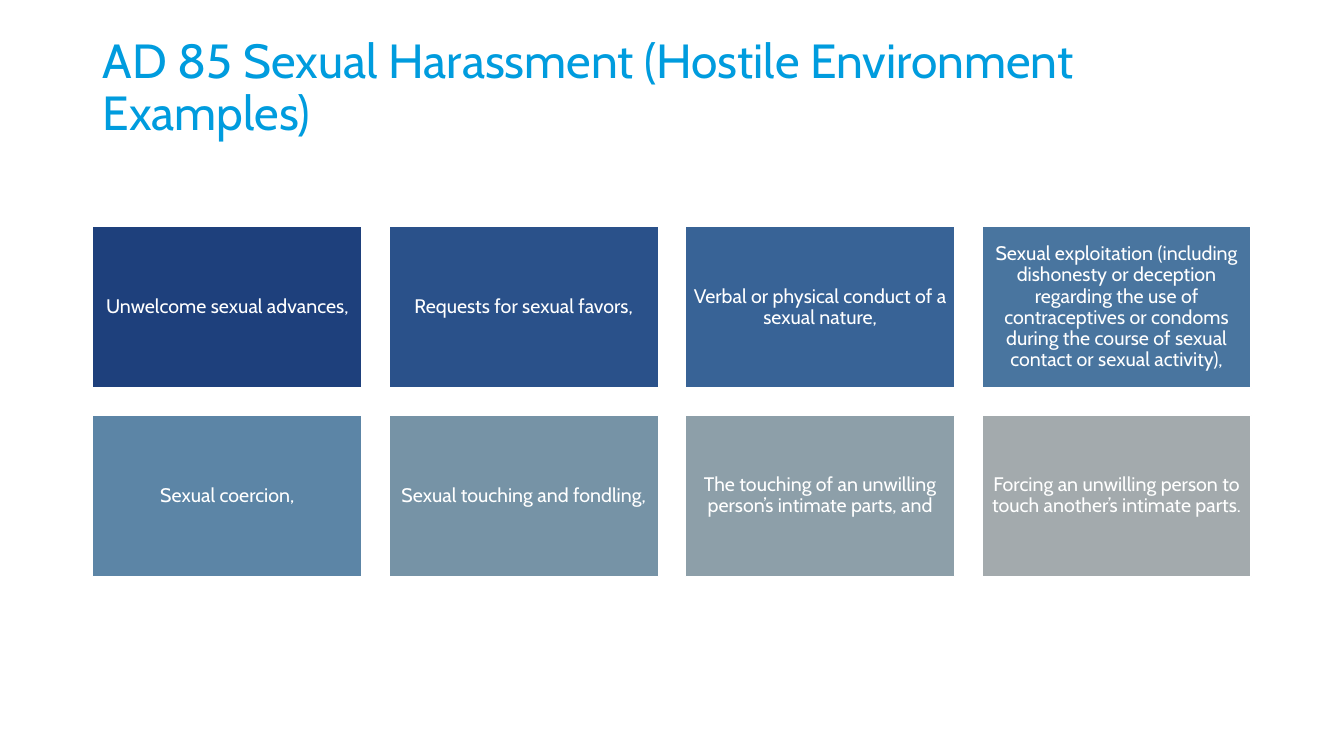
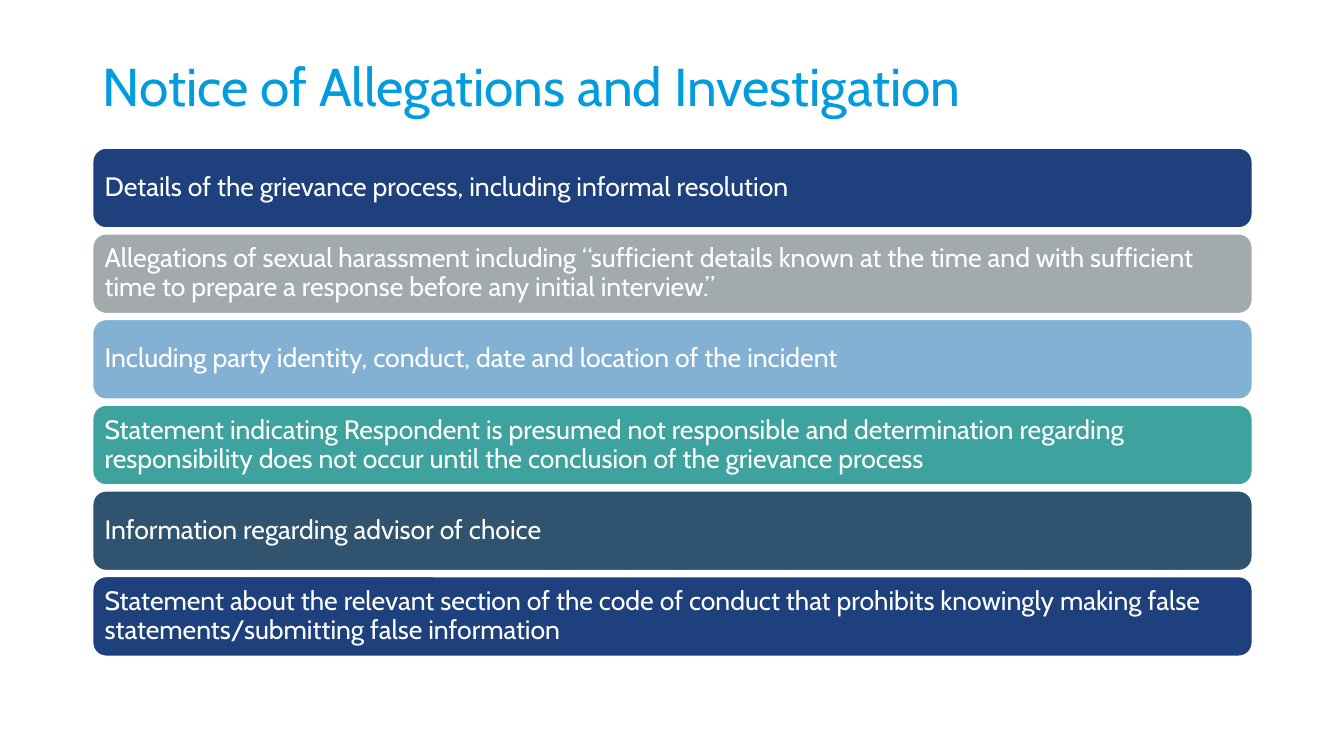
from pptx import Presentation
from pptx.dml.color import RGBColor
from pptx.enum import shapes, text
from pptx.util import Inches, Pt

COLORS = {
    "title": "009CDE",
    "white": "FFFFFF",
    "navy": "1E407C",
    "royal": "2A518A",
    "cobalt": "386396",
    "denim": "49759F",
    "steel": "5C85A6",
    "slate": "7693A6",
    "mist": "8D9FA9",
    "gray": "A3AAAD",
    "sky": "83B1D4",
    "teal": "3EA39E",
    "ink": "305470",
}
LEFT, WIDTH = 0.92, 11.5

EXAMPLES = [
    ("navy", "Unwelcome sexual advances,"),
    ("royal", "Requests for sexual favors,"),
    ("cobalt", "Verbal or physical conduct of a sexual nature,"),
    ("denim", "Sexual exploitation (including dishonesty or deception regarding "
              "the use of contraceptives or condoms during the course of sexual "
              "contact or sexual activity),"),
    ("steel", "Sexual coercion,"),
    ("slate", "Sexual touching and fondling,"),
    ("mist", "The touching of an unwilling person’s intimate parts, and"),
    ("gray", "Forcing an unwilling person to touch another’s intimate parts."),
]
NOTICE_ITEMS = [
    ("navy", "Details of the grievance process, including informal resolution"),
    ("gray", "Allegations of sexual harassment including “sufficient details known "
             "at the time and with sufficient time to prepare a response before "
             "any initial interview.”"),
    ("sky", "Including party identity, conduct, date and location of the incident"),
    ("teal", "Statement indicating Respondent is presumed not responsible and "
             "determination regarding responsibility does not occur until the "
             "conclusion of the grievance process"),
    ("ink", "Information regarding advisor of choice"),
    ("navy", "Statement about the relevant section of the code of conduct that "
             "prohibits knowingly making false statements/submitting false "
             "information"),
]


def rgb(name):
    return RGBColor.from_string(COLORS[name])


class Deck:
    """Holds the shared style and the slide being built."""

    font = "Cabin"
    line_spacing = 0.9

    def __init__(self):
        self.presentation = Presentation()
        self.presentation.slide_width = Inches(13.33)
        self.presentation.slide_height = Inches(7.5)
        self.slide = None

    def add_slide(self, title, title_size):
        self.slide = self.presentation.slides.add_slide(
            self.presentation.slide_layouts[6])
        box = self.slide.shapes.add_textbox(
            Inches(LEFT), Inches(0.4), Inches(WIDTH), Inches(0.97))
        self.set_text(box, title, title_size, "title", text.PP_ALIGN.LEFT, 0.1, 0.05)

    def set_text(self, shape, words, size, color, align, side_inset, end_inset):
        frame = shape.text_frame
        frame.word_wrap = True
        frame.vertical_anchor = text.MSO_ANCHOR.MIDDLE
        frame.margin_left = frame.margin_right = Inches(side_inset)
        frame.margin_top = frame.margin_bottom = Inches(end_inset)
        paragraph = frame.paragraphs[0]
        paragraph.text = words
        paragraph.alignment = align
        paragraph.line_spacing = self.line_spacing
        paragraph.font.name = self.font
        paragraph.font.size = Pt(size)
        paragraph.font.color.rgb = rgb(color)

    def panel(self, kind, left, top, width, height, fill, words, size, align, inset):
        """Add a filled, white-edged shape with white text."""
        shape = self.slide.shapes.add_shape(
            kind, Inches(left), Inches(top), Inches(width), Inches(height))
        shape.shadow.inherit = False
        shape.fill.solid()
        shape.fill.fore_color.rgb = rgb(fill)
        shape.line.color.rgb = rgb("white")
        shape.line.width = Pt(1)
        self.set_text(shape, words, size, "white", align, inset, inset)

    def tile_grid(self, items, columns=4):
        for index, (fill, words) in enumerate(items):
            row, column = divmod(index, columns)
            self.panel(shapes.MSO_SHAPE.RECTANGLE, LEFT + 2.94 * column,
                       2.25 + 1.87 * row, 2.67, 1.6, fill, words, 14,
                       text.PP_ALIGN.CENTER, 0.06)

    def bar_list(self, items):
        for row, (fill, words) in enumerate(items):
            self.panel(shapes.MSO_SHAPE.ROUNDED_RECTANGLE, LEFT,
                       1.47 + 0.85 * row, WIDTH, 0.79, fill, words, 19,
                       text.PP_ALIGN.LEFT, 0.08)


def main():
    deck = Deck()
    deck.add_slide("AD 85 Sexual Harassment (Hostile Environment Examples)", 34.2)
    deck.tile_grid(EXAMPLES)
    deck.add_slide("Notice of Allegations and Investigation", 38)
    deck.bar_list(NOTICE_ITEMS)
    deck.presentation.save("out.pptx")


if __name__ == "__main__":
    main()
